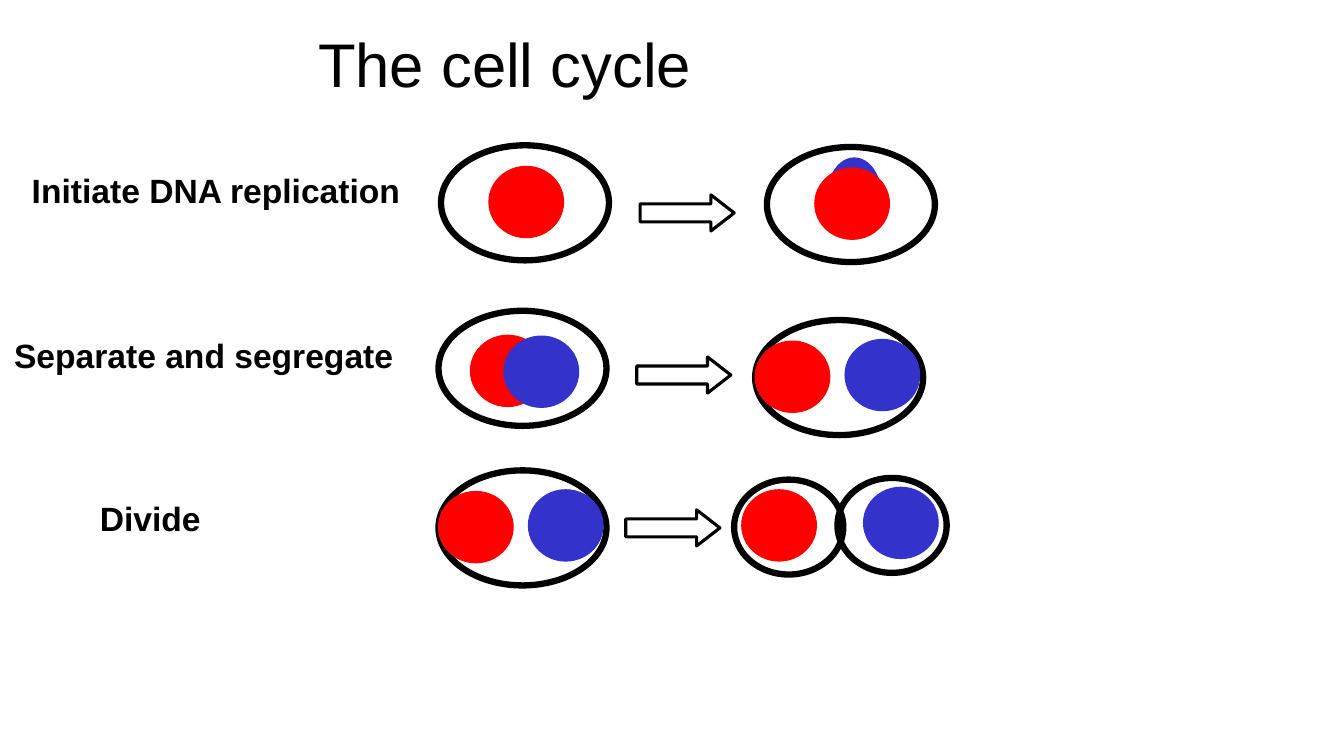
from pptx import Presentation
from pptx import util as u
from pptx.dml.color import RGBColor
from pptx.enum import shapes, text

COLORS = {"ink": "000000", "red": "FF0000", "blue": "3333CC"}
COLUMNS, ROWS = 160, 90
CELL, DAUGHTER, NUCLEUS, BUD = (20, 13.7), (13, 11.3), (8.9, 8.5), (6.4, 9)
ARROW = (11.2, 4.3)

deck = Presentation()
deck.slide_width, deck.slide_height = u.Inches(13.333), u.Inches(7.5)


def place(left, top, width, height):
    """Turn grid columns and rows into slide lengths."""
    column, row = deck.slide_width / COLUMNS, deck.slide_height / ROWS
    return [u.Emu(round(n * unit)) for n, unit in
            zip((left, top, width, height), (column, row, column, row))]


def write(frame, words, size, bold=False, align=text.PP_ALIGN.LEFT,
          anchor=text.MSO_ANCHOR.TOP, wrap=False):
    """Fill a text frame with one formatted paragraph."""
    frame.word_wrap, frame.vertical_anchor = wrap, anchor
    para = frame.paragraphs[0]
    para.alignment = align
    span = para.add_run()
    span.text = words
    span.font.name, span.font.size, span.font.bold = "Arial", u.Pt(size), bold
    span.font.color.rgb = RGBColor.from_string(COLORS["ink"])


def add_outline(page, kind, box, color="ink", weight=0.75, filled=False):
    """Draw a preset shape with a solid line and an optional fill."""
    shape = page.shapes.add_shape(kind, *place(*box))
    shape.shadow.inherit = False
    shade = RGBColor.from_string(COLORS[color])
    if filled:
        shape.fill.solid()
        shape.fill.fore_color.rgb = shade
    else:
        shape.fill.background()
    shape.line.color.rgb, shape.line.width = shade, u.Pt(weight)
    return shape


def add_cell(page, left, top, size, nuclei):
    """Draw a cell membrane and the nuclei placed inside it."""
    oval = shapes.MSO_SHAPE.OVAL
    add_outline(page, oval, (left, top, *size), weight=4.5)
    for color, across, down, extent in nuclei:
        add_outline(page, oval, (left + across, top + down, *extent), color, filled=True)


def add_stage(page, top, label, arrow, cells):
    """Draw one stage of the cycle: label, arrow and cells below the given top."""
    words, left, down, width = label
    box = page.shapes.add_textbox(*place(left, top + down, width, 6))
    write(box.text_frame, words, 24, bold=True)
    for left, down, size, nuclei in cells:
        add_cell(page, left, top + down, size, nuclei)
    left, down = arrow
    pointer = add_outline(page, shapes.MSO_SHAPE.RIGHT_ARROW,
                          (left, top + down, *ARROW), weight=2.25)
    pointer.adjustments[0], pointer.adjustments[1] = 0.5, 0.644


def add_title(page, box):
    """Set the slide title in the given box."""
    title = page.shapes.title
    title.left, title.top, title.width, title.height = place(*box)
    write(title.text_frame, "The cell cycle", 44, align=text.PP_ALIGN.CENTER,
          anchor=text.MSO_ANCHOR.MIDDLE, wrap=True)


def main():
    """Build the cell cycle slide and save it."""
    page = deck.slides.add_slide(deck.slide_layouts[5])
    add_title(page, (9.1, 0, 102, 15))
    segregated = [("red", 0, 2.5, NUCLEUS), ("blue", 10.7, 2.3, NUCLEUS)]
    single = [("red", 5.7, 2.5, NUCLEUS)]
    replicating = [("blue", 7.2, 1.3, BUD)] + single
    overlapping = [("red", 3.8, 2.9, NUCLEUS), ("blue", 7.8, 3, NUCLEUS)]
    stages = [
        (17.3, ("Initiate DNA replication", 2.6, 2.3, 46.4), (76.2, 5.9),
         [(52.5, 0, CELL, single), (91.3, 0.2, CELL, replicating)]),
        (37, ("Separate and segregate", 0.5, 2.3, 47.5), (75.8, 5.5),
         [(52.2, 0, CELL, overlapping), (89.9, 1.1, CELL, segregated)]),
        (56, ("Divide", 10.7, 2.7, 14.4), (74.5, 4.7),
         [(52.2, 0, CELL, segregated),
          (87.4, 1.1, DAUGHTER, [("red", 0.9, 1.2, NUCLEUS)]),
          (99.7, 0.9, DAUGHTER, [("blue", 3.1, 1.1, NUCLEUS)])]),
    ]
    for stage in stages:
        add_stage(page, *stage)
    deck.save("out.pptx")


if __name__ == "__main__":
    main()
